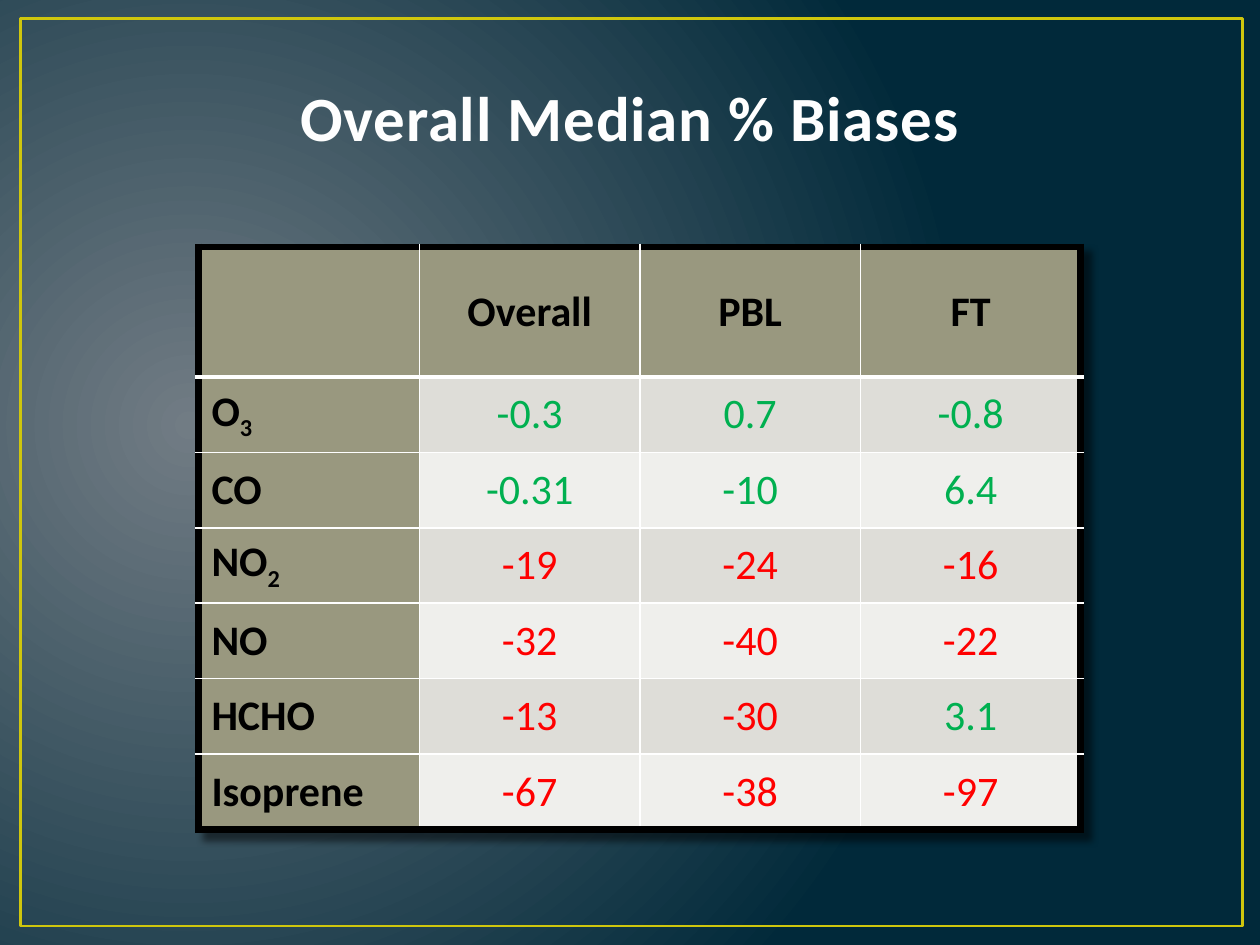
"""Build the slide with the table of overall median biases in percent."""
from lxml import etree
from pptx import Presentation
from pptx.dml.color import RGBColor
from pptx.enum.shapes import MSO_SHAPE
from pptx.enum.text import MSO_ANCHOR, PP_ALIGN
from pptx.oxml import parse_xml
from pptx.oxml.ns import nsdecls, qn
from pptx.util import Cm, Pt

RECTANGLE = MSO_SHAPE.RECTANGLE
MIDDLE = MSO_ANCHOR.MIDDLE
LEFT, CENTER = PP_ALIGN.LEFT, PP_ALIGN.CENTER

HEADINGS = ["", "Overall", "PBL", "FT"]
BIASES = [
    ["O3", "-0.3", "0.7", "-0.8"],
    ["CO", "-0.31", "-10", "6.4"],
    ["NO2", "-19", "-24", "-16"],
    ["NO", "-32", "-40", "-22"],
    ["HCHO", "-13", "-30", "3.1"],
    ["Isoprene", "-67", "-38", "-97"],
]
SMALL_BIAS_LIMIT = 10


def color(value):
    return RGBColor.from_string(value)


class BiasSlide:
    font_name = "Calibri"
    black, white, title_color = "000000", "FFFFFF", "FEFEFE"
    frame_color, heading_fill = "CFC60D", "99987F"
    band_fills = ["EFEFEC", "DEDDD8"]
    small_bias, large_bias = "00B050", "FF0000"
    inner_line, heading_line, outer_line = 1, 3, 4.5

    def __init__(self, presentation):
        self.slide = presentation.slides.add_slide(presentation.slide_layouts[6])

    def background(self, center, edge):
        fill = self.slide.background.fill
        fill.gradient()
        for stop, value in zip(fill.gradient_stops, (center, edge)):
            stop.color.rgb = color(value)
        linear = next(self.slide.element.iter(qn("a:lin")))
        linear.getparent().replace(linear, parse_xml(
            f'<a:path {nsdecls("a")} path="circle">'
            '<a:fillToRect l="15000" t="50000" r="85000" b="60000"/></a:path>'))

    def frame(self, left, top, width, height):
        shape = self.slide.shapes.add_shape(
            RECTANGLE, Cm(left), Cm(top), Cm(width), Cm(height))
        shape.shadow.inherit = False
        shape.fill.background()
        shape.line.color.rgb = color(self.frame_color)
        shape.line.width = Pt(1.5)

    def format_run(self, run, size, value, bold):
        run.font.name = self.font_name
        run.font.size = Pt(size)
        run.font.bold = bold
        run.font.color.rgb = color(value)

    def title(self, text, left, top, width, height):
        shape = self.slide.shapes.add_textbox(
            Cm(left), Cm(top), Cm(width), Cm(height))
        text_frame = shape.text_frame
        text_frame.word_wrap = True
        text_frame.vertical_anchor = MIDDLE
        text_frame.text = text
        paragraph = text_frame.paragraphs[0]
        paragraph.alignment = CENTER
        run = paragraph.runs[0]
        self.format_run(run, 36, self.title_color, True)
        run.font._element.set("spc", "50")

    def table(self, rows, left, top, width, heading_height, row_height):
        height = heading_height + row_height * (len(rows) - 1)
        shape = self.slide.shapes.add_table(
            len(rows), len(rows[0]), Cm(left), Cm(top), Cm(width), Cm(height))
        table = shape.table
        table.first_row = table.horz_banding = False
        self.table_shadow(table)
        for column in table.columns:
            column.width = Cm(width / len(rows[0]))
        for row_index, texts in enumerate(rows):
            table.rows[row_index].height = Cm(row_height if row_index else heading_height)
            for column_index, text in enumerate(texts):
                cell = table.cell(row_index, column_index)
                self.cell(cell, text, row_index, column_index)
                self.borders(cell, row_index, column_index, len(rows) - 1, len(texts) - 1)

    def table_shadow(self, table):
        table._tbl.tblPr.insert(0, parse_xml(
            f'<a:effectLst {nsdecls("a")}><a:outerShdw blurRad="50800" dist="76200" '
            'dir="2700000" algn="tl" rotWithShape="0"><a:srgbClr val="000000">'
            '<a:alpha val="50000"/></a:srgbClr></a:outerShdw></a:effectLst>'))

    def cell(self, cell, text, row_index, column_index):
        is_heading = row_index == 0 or column_index == 0
        cell.fill.solid()
        cell.fill.fore_color.rgb = color(
            self.heading_fill if is_heading else self.band_fills[row_index % 2])
        cell.vertical_anchor = MIDDLE
        paragraph = cell.text_frame.paragraphs[0]
        paragraph.alignment = CENTER if column_index else LEFT
        if not text:
            return
        if is_heading:
            value = self.black
        else:
            is_small = abs(float(text)) <= SMALL_BIAS_LIMIT
            value = self.small_bias if is_small else self.large_bias
        base = text.rstrip("0123456789") if is_heading else text
        paragraph.text = base
        if base != text:
            subscript = paragraph.add_run()
            subscript.text = text[len(base):]
            subscript.font._element.set("baseline", "-25000")
        for run in paragraph.runs:
            self.format_run(run, 24, value, is_heading)

    def borders(self, cell, row_index, column_index, last_row, last_column):
        outer_sides = {
            "lnL": column_index == 0,
            "lnR": column_index == last_column,
            "lnT": row_index == 0,
            "lnB": row_index == last_row,
        }
        properties = cell._tc.get_or_add_tcPr()
        for position, (side, is_outer) in enumerate(outer_sides.items()):
            width = self.outer_line if is_outer else self.inner_line
            if side == "lnB" and row_index == 0:
                width = self.heading_line
            line = etree.Element(qn(f"a:{side}"), w=str(Pt(width)))
            fill = etree.SubElement(line, qn("a:solidFill"))
            etree.SubElement(fill, qn("a:srgbClr"), val=self.black if is_outer else self.white)
            properties.insert(position, line)


def main():
    presentation = Presentation()
    presentation.slide_width, presentation.slide_height = Cm(25.4), Cm(19.05)
    bias_slide = BiasSlide(presentation)
    bias_slide.background("717C84", "01293A")
    bias_slide.frame(0.41, 0.38, 24.64, 18.29)
    bias_slide.title("Overall Median % Biases", 1.27, 0.76, 22.86, 3.18)
    bias_slide.table([HEADINGS] + BIASES, 4.01, 4.98, 17.78, 2.62, 1.52)
    presentation.save("out.pptx")


if __name__ == "__main__":
    main()
